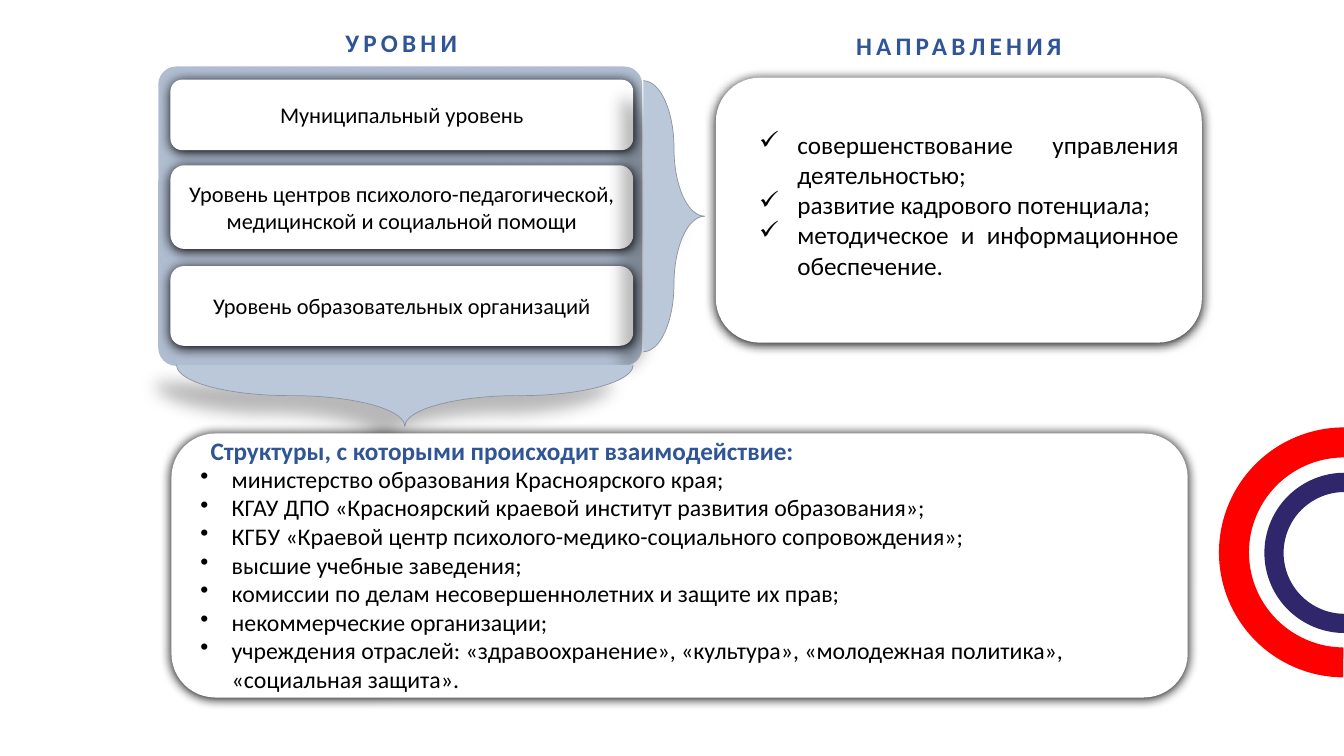
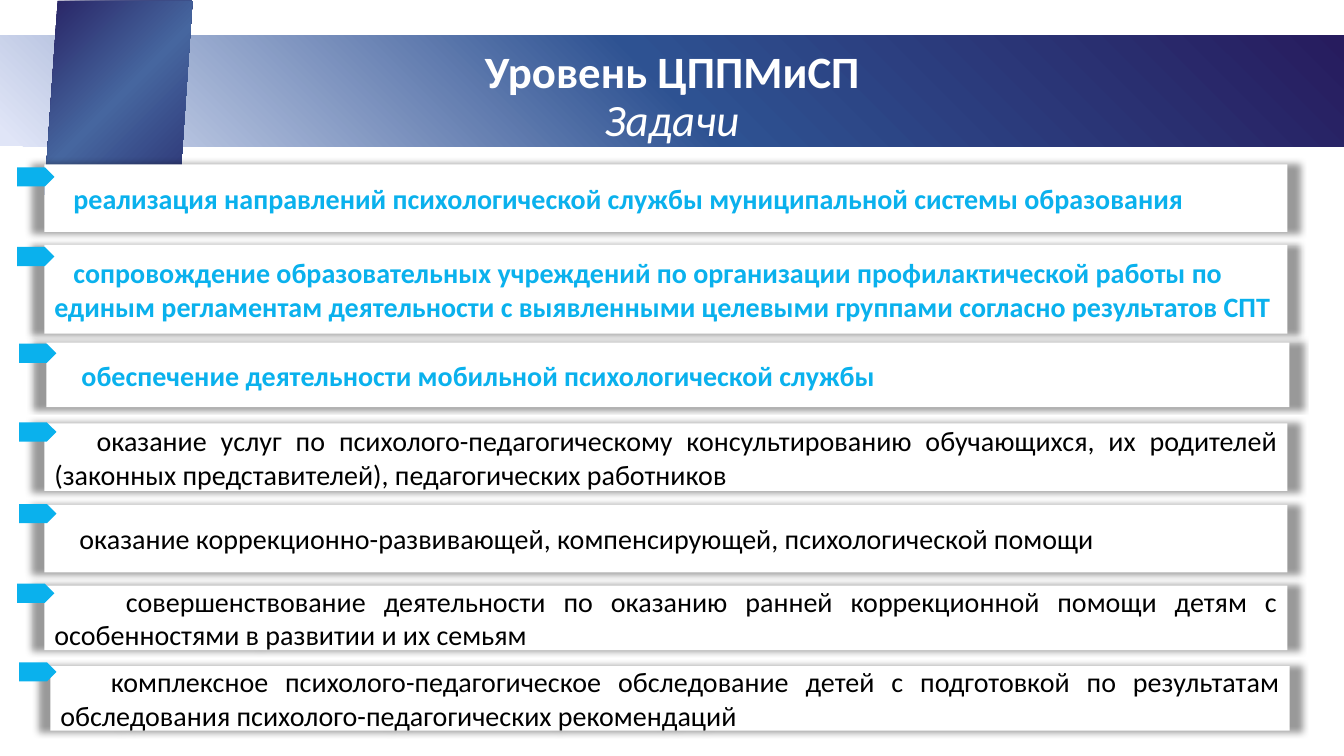
from pptx import Presentation
from pptx.dml.color import RGBColor
from pptx.enum.shapes import MSO_SHAPE as Shape
from pptx.enum.text import MSO_ANCHOR as Anchor, PP_ALIGN as Align
from pptx.oxml import parse_xml
from pptx.oxml.ns import nsdecls, qn
from pptx.util import Inches, Pt
from lxml.etree import SubElement

FONT = "Calibri"
BLACK = RGBColor(0x00, 0x00, 0x00)
WHITE = RGBColor(0xFF, 0xFF, 0xFF)
BLUE = RGBColor(0x2F, 0x55, 0x97)
CYAN = RGBColor(0x0A, 0xB1, 0xED)
PANEL = RGBColor(0xB0, 0xBD, 0xD0)
BRACE = RGBColor(0xBB, 0xC8, 0xDA)
EDGE = RGBColor(0x8B, 0x94, 0xA2)
NAVY = RGBColor(0x2F, 0x26, 0x6B)
RED = RGBColor(0xFF, 0x00, 0x00)

HARD = dict(alpha=100, blur=8.5, dist=1, angle=90)
SOFT = dict(alpha=28, blur=11.8, dist=19.7, angle=141)
HALO = dict(alpha=40, blur=5, dist=0, angle=0, scale=102)

BAND = ([(0, "271C5E"), (50, "2E5292"), (99, "E0E5F7")],
        '<a:path path="circle"><a:fillToRect l="100000" b="100000"/></a:path>')
TAB = ([(0, "282364"), (50, "46669F"), (100, "2A3071")],
       '<a:lin ang="2700000" scaled="0"/>')

LEVELS = [
    (0.79, 0.7, "Муниципальный уровень"),
    (1.64, 0.83, "Уровень центров психолого-педагогической, "
                 "медицинской и социальной помощи"),
    (2.64, 0.79, "Уровень образовательных организаций"),
]
AIMS = [
    "совершенствование управления деятельностью;",
    "развитие кадрового потенциала;",
    "методическое и информационное обеспечение.",
]
BODIES = [
    "министерство образования Красноярского края;",
    "КГАУ ДПО «Красноярский краевой институт развития образования»;",
    "КГБУ «Краевой центр психолого-медико-социального сопровождения»;",
    "высшие учебные заведения;",
    "комиссии по делам несовершеннолетних и защите их прав;",
    "некоммерческие организации;",
    "учреждения отраслей: «здравоохранение», «культура», "
    "«молодежная политика»,\n«социальная защита».",
]
BRACES = [((6.38, 0.8, 0.61, 2.69), 0, 1.47),
          ((3.71, 1.66, 0.61, 4.53), 90, 1.84)]
ARCS = [((12.54, 4.69, 1.59, 1.59), NAVY), ((12.09, 4.24, 2.48, 2.48), RED)]

TASKS = [
    ((0.44, 1.63, 12.33, 0.67), (0.17, 1.66), 0.19, True, Align.JUSTIFY,
     "реализация направлений психологической службы "
     "муниципальной системы образования"),
    ((0.44, 2.43, 12.33, 0.88), (0.17, 2.45), 0.19, True, Align.LEFT,
     "сопровождение образовательных учреждений по организации "
     "профилактической работы по единым регламентам деятельности "
     "с выявленными целевыми группами согласно результатов СПТ"),
    ((0.46, 3.4, 12.33, 0.64), (0.19, 3.41), 0.25, True, Align.JUSTIFY,
     "обеспечение деятельности мобильной психологической службы"),
    ((0.44, 4.2, 12.33, 0.67), (0.19, 4.19), 0.42, False, Align.JUSTIFY,
     "оказание услуг по психолого-педагогическому консультированию "
     "обучающихся, их родителей (законных представителей), "
     "педагогических работников"),
    ((0.44, 5.01, 12.33, 0.67), (0.19, 5), 0.25, False, Align.JUSTIFY,
     "оказание коррекционно-развивающей, компенсирующей, "
     "психологической помощи"),
    ((0.44, 5.81, 12.33, 0.64), (0.17, 5.79), 0.71, False, Align.JUSTIFY,
     "совершенствование деятельности по оказанию ранней коррекционной "
     "помощи детям с особенностями в развитии и их семьям"),
    ((0.5, 6.61, 12.29, 0.64), (0.19, 6.57), 0.5, False, Align.JUSTIFY,
     "комплексное психолого-педагогическое обследование детей "
     "с подготовкой по результатам обследования "
     "психолого-педагогических рекомендаций"),
]


def cast(shape, alpha, blur, dist, angle, scale=100):
    """Give a shape an outer shadow."""
    glow = SubElement(
        shape._element.spPr.find(qn("a:effectLst")), qn("a:outerShdw"),
        blurRad=str(Pt(blur)), dist=str(Pt(dist)), dir=str(angle * 60000),
        sx=str(scale * 1000), sy=str(scale * 1000),
        algn="ctr", rotWithShape="0")
    tint = SubElement(glow, qn("a:srgbClr"), val="000000")
    SubElement(tint, qn("a:alpha"), val=str(alpha * 1000))


def blend(shape, stops, shade):
    """Fill a shape with a gradient."""
    marks = "".join(f'<a:gs pos="{pos * 1000}"><a:srgbClr val="{tint}"/></a:gs>'
                    for pos, tint in stops)
    shape.fill.background()
    props = shape._element.spPr
    props.replace(props.find(qn("a:noFill")), parse_xml(
        f'<a:gradFill {nsdecls("a")} rotWithShape="0">'
        f'<a:gsLst>{marks}</a:gsLst>{shade}</a:gradFill>'))


def draw(slide, kind, box, fill=None, shadow=None, adj=()):
    """Add a preset shape without an outline."""
    shape = slide.shapes.add_shape(kind, *map(Inches, box))
    shape.shadow.inherit = False
    shape.line.fill.background()
    if fill is not None:
        shape.fill.solid()
        shape.fill.fore_color.rgb = fill
    if shadow:
        cast(shape, **shadow)
    for i, value in enumerate(adj):
        shape.adjustments[i] = value
    return shape


def write(shape, lines, size, color=BLACK, align=Align.LEFT, anchor=Anchor.MIDDLE,
          bold=False, italic=False, space=None, gap=None,
          bullet=None, hang=0, first=0):
    """Write paragraphs into a shape."""
    frame = shape.text_frame
    frame.word_wrap = True
    frame.vertical_anchor = anchor
    for i, line in enumerate(lines):
        para = frame.add_paragraph() if i else frame.paragraphs[0]
        para.alignment = align
        if space:
            para.line_spacing = space
        props = para._p.get_or_add_pPr()
        props.set("marL", str(Inches(hang)))
        props.set("indent", str(Inches(first - hang)))
        if bullet:
            SubElement(props, qn("a:buChar"), char=bullet)
        for j, part in enumerate(line.split("\n")):
            if j:
                para.add_line_break()
            run = para.add_run()
            run.text = part
            font = run.font
            font.name, font.size = FONT, Pt(size)
            font.bold, font.italic = bold, italic
            font.color.rgb = color
            if gap:
                run._r.get_or_add_rPr().set("spc", str(gap * 100))


def label(slide, box, lines, size, **style):
    """Add a text box."""
    write(slide.shapes.add_textbox(*map(Inches, box)), lines, size, **style)


def levels(slide):
    """Build the slide of levels and directions."""
    head = dict(color=BLUE, bold=True)
    wide = dict(head, align=Align.CENTER, gap=3)
    draw(slide, Shape.ROUNDED_RECTANGLE, (1.57, 0.66, 4.8, 2.97), PANEL, adj=[0.06])
    for top, high, text in LEVELS:
        card = draw(slide, Shape.ROUNDED_RECTANGLE, (1.69, top, 4.59, high), WHITE, HARD)
        write(card, [text], 16, align=Align.CENTER)
    label(slide, (2.88, 0.19, 2.2, 0.5), ["УРОВНИ"], 18, space=0.9, **wide)
    draw(slide, Shape.ROUNDED_RECTANGLE, (7.1, 0.77, 4.82, 2.63), WHITE, HARD)
    label(slide, (6.24, 0.25, 6.54, 0.4), ["НАПРАВЛЕНИЯ"], 18,
          anchor=Anchor.TOP, **wide)
    for box, turn, bend in BRACES:
        brace = draw(slide, Shape.RIGHT_BRACE, box, BRACE, SOFT, [bend, 0.5])
        brace.rotation = turn
        brace.line.color.rgb = EDGE
        brace.line.width = Pt(0.5)
    draw(slide, Shape.ROUNDED_RECTANGLE, (1.7, 4.3, 10.08, 2.62), WHITE, HARD)
    label(slide, (1.99, 4.24, 8.12, 0.5),
          ["Структуры, с которыми происходит взаимодействие:"], 18, space=0.9, **head)
    label(slide, (7.43, 1.23, 4.36, 1.62), AIMS, 18, align=Align.JUSTIFY,
          anchor=Anchor.TOP, bullet="✓", hang=0.38)
    label(slide, (1.89, 4.56, 10.43, 2.39), BODIES, 17,
          anchor=Anchor.TOP, bullet="•", hang=0.31)
    for box, fill in ARCS:
        arc = draw(slide, Shape.BLOCK_ARC, box, fill, adj=[108.24, 0.36, 0.12])
        arc.rotation = 270


def tasks(slide):
    """Build the slide of tasks."""
    blend(draw(slide, Shape.RECTANGLE, (0, 0.35, 13.33, 1.1)), *BAND)
    head = dict(color=WHITE, align=Align.CENTER)
    label(slide, (0.92, 0.12, 11.5, 1.23), ["Уровень ЦППМиСП"], 32,
          bold=True, space=0.9, **head)
    blend(draw(slide, Shape.PARALLELOGRAM, (0.44, 0.01, 1.47, 1.92), adj=[0.09]), *TAB)
    label(slide, (3.32, 0.86, 6.69, 0.64), ["Задачи"], 32,
          italic=True, anchor=Anchor.TOP, **head)
    for box, _, first, key, align, text in TASKS:
        card = draw(slide, Shape.RECTANGLE, box, WHITE, HALO)
        write(card, [text], 20, color=CYAN if key else BLACK, bold=key,
              align=align, first=first)
    for _, spot, *_ in TASKS:
        draw(slide, Shape.PENTAGON, (*spot, 0.37, 0.19), CYAN)


def main():
    """Build and save the deck."""
    deck = Presentation()
    deck.slide_width, deck.slide_height = Inches(13.33), Inches(7.5)
    for build in (levels, tasks):
        build(deck.slides.add_slide(deck.slide_layouts[6]))
    deck.save("out.pptx")


if __name__ == "__main__":
    main()
